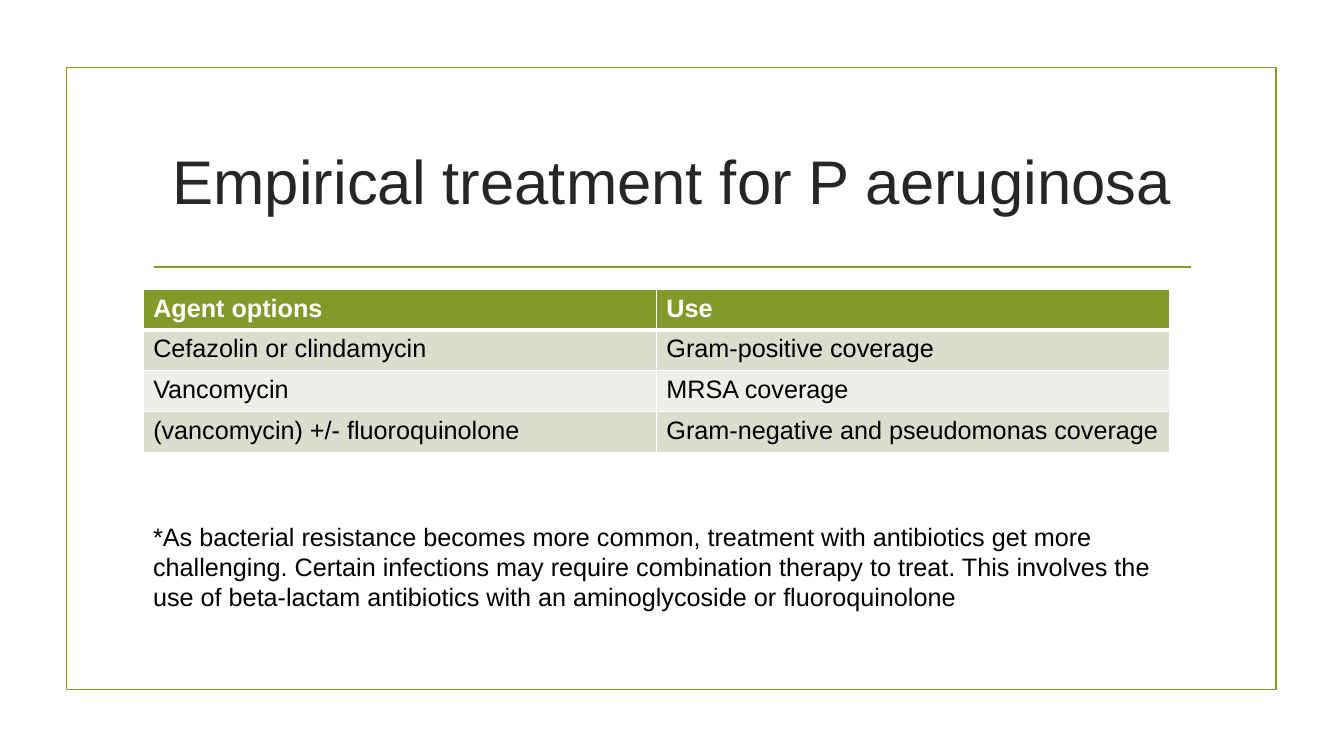
"""Build the slide on empirical treatment for P aeruginosa."""
from lxml.etree import SubElement
from pptx import Presentation
from pptx.dml.color import RGBColor
from pptx.enum.shapes import MSO_CONNECTOR, MSO_SHAPE
from pptx.enum.text import MSO_ANCHOR, MSO_AUTO_SIZE, PP_ALIGN
from pptx.oxml.ns import qn
from pptx.util import Inches, Pt

TITLE = "Empirical treatment for P aeruginosa"
TREATMENTS = [
    ("Agent options", "Use"),
    ("Cefazolin or clindamycin", "Gram-positive coverage"),
    ("Vancomycin", "MRSA coverage"),
    ("(vancomycin) +/- fluoroquinolone", "Gram-negative and pseudomonas coverage"),
]
FOOTNOTE = (
    "*As bacterial resistance becomes more common, treatment with antibiotics get more "
    "challenging. Certain infections may require combination therapy to treat. This involves "
    "the use of beta-lactam antibiotics with an aminoglycoside or fluoroquinolone"
)

FONT = "Arial"
OLIVE = RGBColor(0x83, 0x99, 0x2A)
BAND_DARK = RGBColor(0xD9, 0xDE, 0xCD)
BAND_LIGHT = RGBColor(0xED, 0xEF, 0xE8)
CHARCOAL = RGBColor(0x26, 0x26, 0x26)
BLACK = RGBColor(0, 0, 0)
WHITE = RGBColor(0xFF, 0xFF, 0xFF)

LEFT, BODY_WIDTH = Inches(1.42), Inches(10.18)
TABLE_TOP, ROW_HEIGHT = Inches(2.87), Inches(0.405)


def write(text_frame, text, size, color, bold=False):
    """Add one formatted run to the first paragraph and return the paragraph."""
    paragraph = text_frame.paragraphs[0]
    run = paragraph.add_run()
    run.text = text
    run.font.name, run.font.size = FONT, Pt(size)
    run.font.bold, run.font.color.rgb = bold, color
    return paragraph


def add_borders(cell, bottom_width, top_width):
    """Draw white lines on all four sides of a cell."""
    properties = cell._tc.get_or_add_tcPr()
    for side, width in (("L", 1), ("R", 1), ("T", top_width), ("B", bottom_width)):
        border = SubElement(properties, qn(f"a:ln{side}"), w=str(Pt(width)))
        fill = SubElement(border, qn("a:solidFill"))
        SubElement(fill, qn("a:srgbClr"), val=str(WHITE))


def add_frame(slide):
    """Add the olive frame and the rule below the title."""
    frame = slide.shapes.add_shape(
        MSO_SHAPE.RECTANGLE, Inches(0.66), Inches(0.67), Inches(12), Inches(6.17))
    frame.shadow.inherit = False
    frame.fill.background()
    rule = slide.shapes.add_connector(
        MSO_CONNECTOR.STRAIGHT, Inches(1.53), Inches(2.65), Inches(11.81), Inches(2.65))
    SubElement(rule._element.spPr, qn("a:effectLst"))
    for outline in (frame.line, rule.line):
        outline.color.rgb, outline.width = OLIVE, Pt(1.25)


def add_title(slide):
    """Place and fill the title."""
    title = slide.shapes.title
    title.left, title.top = LEFT, Inches(1.07)
    title.width, title.height = Inches(10.5), Inches(1.43)
    title.text_frame.vertical_anchor = MSO_ANCHOR.MIDDLE
    write(title.text_frame, TITLE, 44, CHARCOAL).alignment = PP_ALIGN.CENTER


def add_treatments(slide):
    """Add the table of agents and their uses."""
    row_count, column_count = len(TREATMENTS), len(TREATMENTS[0])
    table = slide.shapes.add_table(
        row_count, column_count, LEFT, TABLE_TOP, BODY_WIDTH, ROW_HEIGHT * row_count).table
    for row, treatment in enumerate(TREATMENTS):
        header = row == 0
        band = OLIVE if header else BAND_DARK if row % 2 else BAND_LIGHT
        for column, text in enumerate(treatment):
            cell = table.cell(row, column)
            add_borders(cell, 3 if header else 1, 3 if row == 1 else 1)
            cell.fill.solid()
            cell.fill.fore_color.rgb = band
            write(cell.text_frame, text, 18, WHITE if header else BLACK, header)


def add_footnote(slide):
    """Add the note on combination therapy."""
    footnote = slide.shapes.add_textbox(LEFT, Inches(5.12), BODY_WIDTH, Inches(1.01)).text_frame
    footnote.word_wrap = True
    footnote.auto_size = MSO_AUTO_SIZE.SHAPE_TO_FIT_TEXT
    write(footnote, FOOTNOTE, 18, BLACK)


def main():
    """Assemble and save the slide."""
    deck = Presentation()
    deck.slide_width, deck.slide_height = Inches(13.33), Inches(7.5)
    slide = deck.slides.add_slide(deck.slide_layouts[5])
    add_frame(slide)
    add_title(slide)
    add_treatments(slide)
    add_footnote(slide)
    deck.save("out.pptx")


if __name__ == "__main__":
    main()
